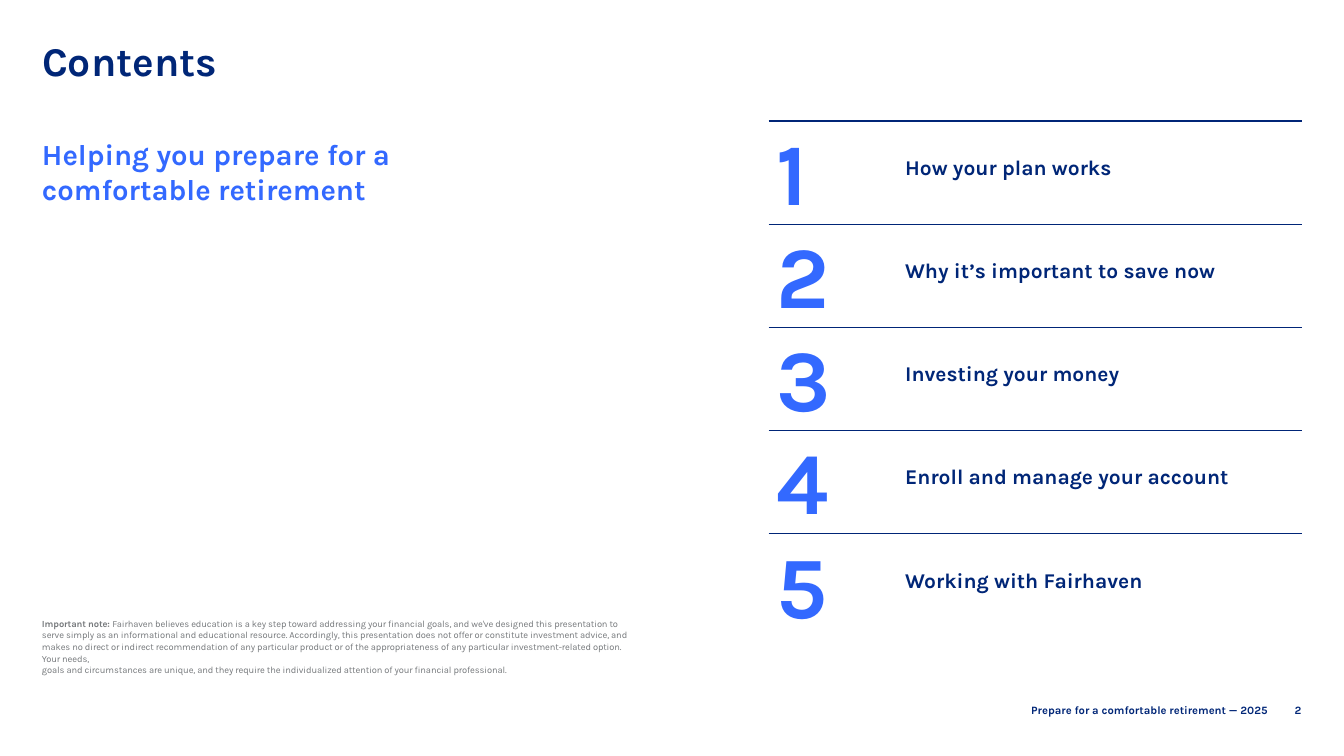
from pptx import Presentation
from pptx import util as u
from pptx.dml.color import RGBColor
from pptx.enum import shapes, text
from pptx.oxml.ns import qn
from lxml import etree

NAVY, BLUE, GREY, RULE = "002677", "3369FF", "75787B", "002577"
CHAPTERS = [
    "How your plan works",
    "Why it’s important to save now",
    "Investing your money",
    "Enroll and manage your account",
    "Working with Fairhaven",
]
NOTE = (
    "Fairhaven believes education is a key step toward addressing your financial goals, "
    "and we've designed this presentation to serve simply as an informational and "
    "educational resource. Accordingly, this presentation does not offer or constitute "
    "investment advice, and makes no direct or indirect recommendation of any particular "
    "product or of the appropriateness of any particular investment-related option. "
    "Your needs,",
    "goals and circumstances are unique, and they require the individualized attention "
    "of your financial professional.",
)


def color(value):
    return RGBColor.from_string(value)


def add_run(p, words, size, fill=NAVY, bold=True, tracking=None):
    r = p.add_run()
    r.text = words
    r.font.name = "Karla"
    r.font.size = u.Pt(size)
    r.font.bold = bold
    r.font.color.rgb = color(fill)
    if tracking is not None:
        r.font._element.set("spc", str(tracking))


def write(sp, words, size, align="LEFT", anchor="TOP", spacing=None, **font):
    tf = sp.text_frame
    tf.word_wrap = True
    tf.auto_size = text.MSO_AUTO_SIZE.NONE
    tf.vertical_anchor = text.MSO_ANCHOR[anchor]
    p = tf.paragraphs[0]
    p.alignment = text.PP_ALIGN[align]
    p.space_before = u.Pt(0)
    if spacing:
        p.line_spacing = spacing
    add_run(p, words, size, **font)
    return tf


def add_text(s, box, words, size, **style):
    sp = s.shapes.add_textbox(*map(u.Cm, box))
    return write(sp, words, size, **style)


def add_rule(s, left, top, width):
    line = s.shapes.add_connector(
        shapes.MSO_CONNECTOR.STRAIGHT,
        u.Cm(left), u.Cm(top), u.Cm(left + width), u.Cm(top))
    line.line.color.rgb = color(RULE)
    line.line.width = u.Pt(1)
    etree.SubElement(line._element.spPr, qn("a:effectLst"))


def add_heading(s, left, top, width, height):
    title = s.shapes.title
    title.left, title.top = u.Cm(left), u.Cm(top)
    title.width, title.height = u.Cm(width), u.Cm(height)
    write(title, "Contents", 35, spacing=0.9)
    add_text(s, (left, top + 2.87, 12.7, 2.31),
             "Helping you prepare for a comfortable retirement", 25, fill=BLUE)


def add_chapters(s, left, top, width, height):
    pitch = height / len(CHAPTERS)
    for i, chapter in enumerate(CHAPTERS):
        y = top + i * pitch
        add_rule(s, left, y, width)
        add_text(s, (left, y + 0.41, 3.68, 2.57), str(i + 1), 75,
                 fill=BLUE, anchor="MIDDLE", spacing=0.9)
        add_text(s, (left + 3.88, y + 0.62, 12, 1.88), chapter, 18,
                 anchor="MIDDLE", spacing=u.Pt(12))


def add_note(s, left, top, width, height):
    plain = dict(size=8, fill=GREY, bold=False, tracking=-10)
    tf = add_text(s, (left, top, width, height), "Important note: ", 8, fill=GREY,
                  tracking=-10, anchor="BOTTOM", spacing=u.Pt(10))
    tf.margin_bottom = 0
    p = tf.paragraphs[0]
    add_run(p, NOTE[0], **plain)
    p.add_line_break()
    add_run(p, NOTE[1], **plain)


def add_footer(s, left, top, width, height):
    number_width = 1.02
    label_width = width - number_width
    add_text(s, (left, top, label_width, height),
             "Prepare for a comfortable retirement — 2025", 9.6,
             align="RIGHT", anchor="MIDDLE")
    add_text(s, (left + label_width, top, number_width, height), "2", 9.6,
             align="RIGHT", anchor="MIDDLE")


def main():
    prs = Presentation()
    prs.slide_width, prs.slide_height = u.Cm(40.64), u.Cm(22.86)
    s = prs.slides.add_slide(prs.slide_layouts[5])
    add_heading(s, 1.02, 1.12, 11.13, 2.13)
    add_chapters(s, 23.24, 3.66, 16.13, 15.6)
    add_note(s, 1.02, 18.47, 18.36, 1.96)
    add_footer(s, 24.84, 21.16, 14.76, 0.61)
    prs.save("out.pptx")


if __name__ == "__main__":
    main()
